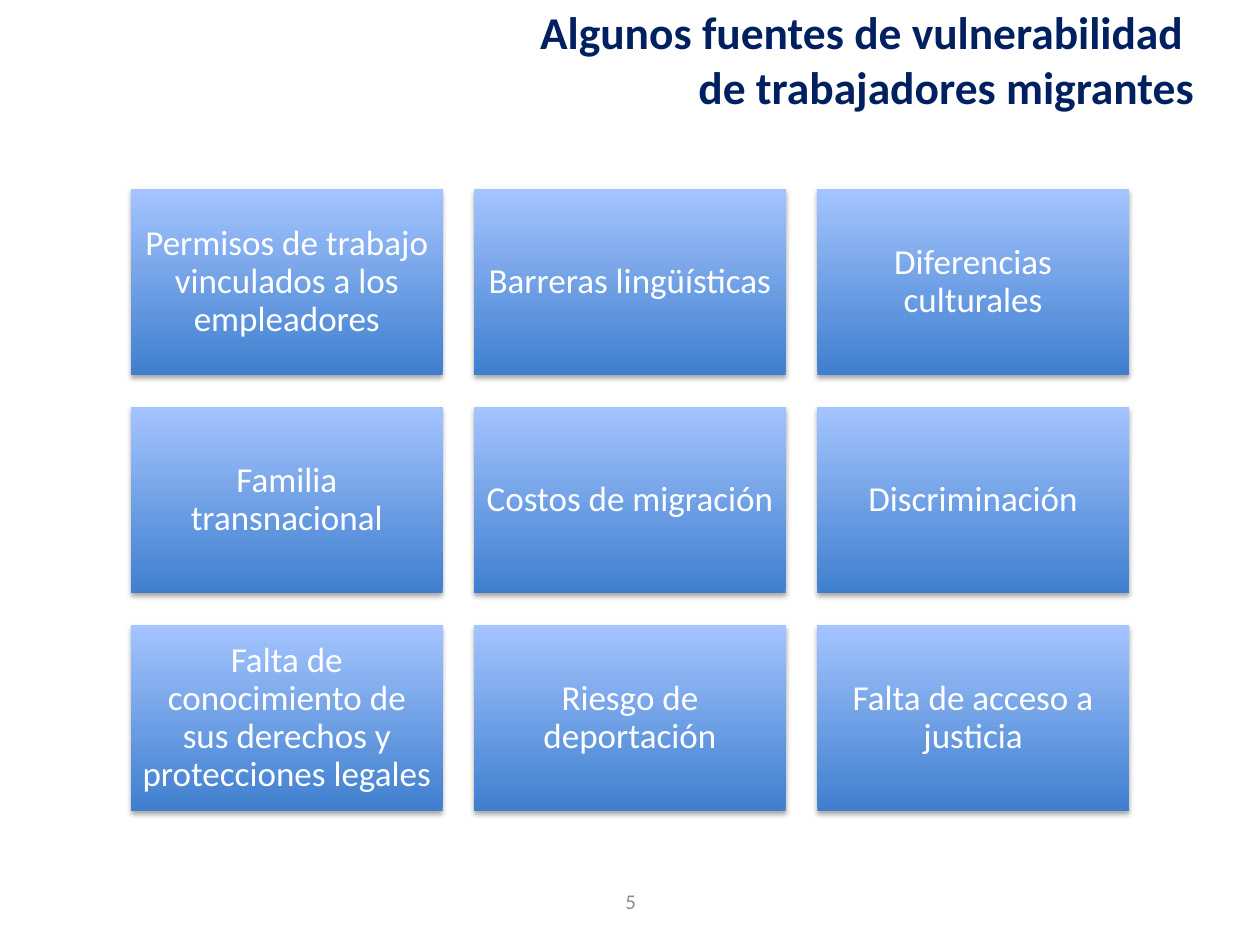
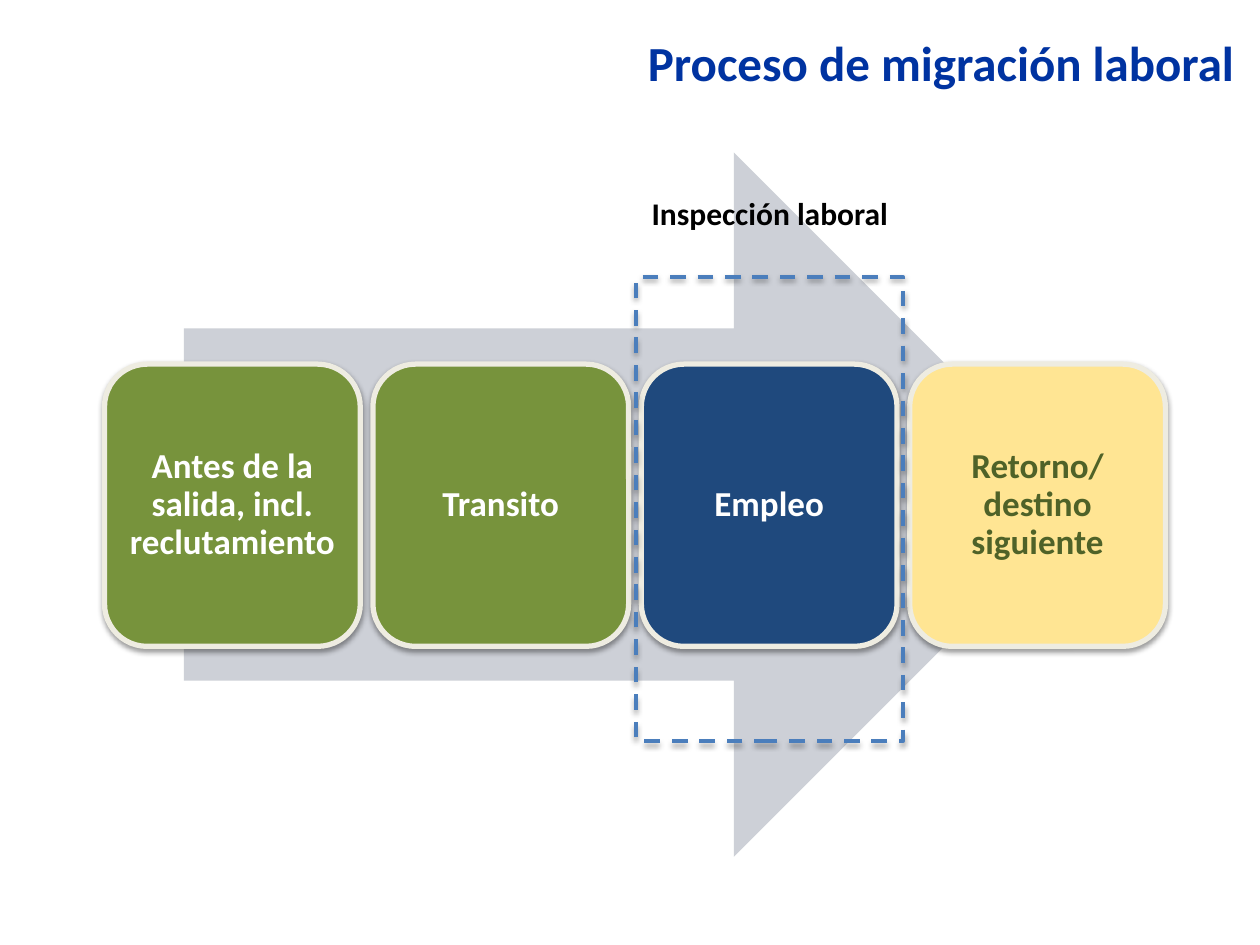
from lxml import etree
from pptx import Presentation
from pptx.dml.color import RGBColor
from pptx.enum.dml import MSO_LINE
from pptx.enum.shapes import MSO_SHAPE
from pptx.enum.text import MSO_ANCHOR, PP_ALIGN
from pptx.oxml.ns import qn
from pptx.util import Inches, Pt

RECTANGLE = MSO_SHAPE.RECTANGLE
ROUNDED = MSO_SHAPE.ROUNDED_RECTANGLE
RIGHT_ARROW = MSO_SHAPE.RIGHT_ARROW
CENTER, RIGHT = PP_ALIGN.CENTER, PP_ALIGN.RIGHT
MIDDLE, TOP = MSO_ANCHOR.MIDDLE, MSO_ANCHOR.TOP
DASH = MSO_LINE.DASH

FONT = "Calibri"
COLORS = {
    "navy": "002060",
    "royal": "0033A1",
    "card_bottom": "3F7FCE",
    "card_top": "A4C4FF",
    "white": "FFFFFF",
    "black": "000000",
    "gray": "8C8C8C",
    "arrow": "CDD0D7",
    "cream": "EEECE1",
    "green": "77933C",
    "blue": "1F497D",
    "yellow": "FFE593",
    "olive": "4F6228",
    "frame": "4B7EBC",
}

SOURCES = [
    ["Permisos de trabajo vinculados a los empleadores",
     "Barreras lingüísticas", "Diferencias culturales"],
    ["Familia transnacional", "Costos de migración", "Discriminación"],
    ["Falta de conocimiento de sus derechos y protecciones legales",
     "Riesgo de deportación", "Falta de acceso a justicia"],
]
STAGES = [
    ("Antes de la salida, incl. reclutamiento", "green", "white"),
    ("Transito", "green", "white"),
    ("Empleo", "blue", "white"),
    ("Retorno/ destino siguiente", "yellow", "olive"),
]


def color(name):
    return RGBColor.from_string(COLORS[name])


def write(shape, text, size, ink, bold=False, align=CENTER, anchor=MIDDLE,
          spacing=1.0, inset=None):
    frame = shape.text_frame
    settings = {"word_wrap": True, "vertical_anchor": anchor}
    if inset is not None:
        for side in ("left", "right", "top", "bottom"):
            settings[f"margin_{side}"] = Inches(inset)
    for name, value in settings.items():
        setattr(frame, name, value)
    para = frame.paragraphs[0]
    para.text = text
    para.alignment = align
    para.line_spacing = spacing
    for span in para.runs:
        for name, value in {"name": FONT, "size": Pt(size), "bold": bold}.items():
            setattr(span.font, name, value)
        span.font.color.rgb = color(ink)


def add_text(page, box, text, size, ink, **style):
    label = page.shapes.add_textbox(*map(Inches, box))
    write(label, text, size, ink, **style)


def add_figure(page, kind, box, fill=None, line=None, width=0):
    figure = page.shapes.add_shape(kind, *map(Inches, box))
    figure.shadow.inherit = False
    if fill:
        figure.fill.solid()
        figure.fill.fore_color.rgb = color(fill)
    else:
        figure.fill.background()
    if line:
        figure.line.color.rgb = color(line)
        figure.line.width = Pt(width)
    else:
        figure.line.fill.background()
    return figure


def add_shadow(figure, distance=1.8, opacity=35):
    effects = figure._element.spPr.find(qn("a:effectLst"))
    shadow = etree.SubElement(effects, qn("a:outerShdw"), {
        "blurRad": str(Pt(3.1)), "dist": str(Pt(distance)),
        "dir": "5400000", "rotWithShape": "0"})
    tint = etree.SubElement(shadow, qn("a:srgbClr"), val=COLORS["black"])
    etree.SubElement(tint, qn("a:alpha"), val=str(opacity * 1000))


def add_title(page, box, text, size, ink):
    add_text(page, box, text, size, ink, bold=True, align=RIGHT)


def add_card_grid(page, box, rows, gap=0.25):
    left, top, width, height = box
    card_width = (width - gap * (len(rows[0]) - 1)) / len(rows[0])
    card_height = (height - gap * (len(rows) - 1)) / len(rows)
    for row, texts in enumerate(rows):
        for column, text in enumerate(texts):
            card = add_figure(page, RECTANGLE, (
                left + column * (card_width + gap),
                top + row * (card_height + gap), card_width, card_height))
            card.fill.gradient()
            card.fill.gradient_angle = 90
            for stop, name in zip(card.fill.gradient_stops,
                                  ("card_bottom", "card_top")):
                stop.color.rgb = color(name)
            add_shadow(card)
            write(card, text, 20, "white", spacing=0.9, inset=0.08)


def add_stages(page, box, stages, gap=0.1):
    left, top, width, height = box
    stage_width = (width - gap * (len(stages) - 1)) / len(stages)
    for index, (text, fill, ink) in enumerate(stages):
        stage = add_figure(page, ROUNDED, (
            left + index * (stage_width + gap), top, stage_width, height),
            fill, "cream", 3)
        add_shadow(stage, distance=1.6, opacity=38)
        write(stage, text, 20, ink, bold=True, spacing=0.9, inset=0.08)


def add_inspection_frame(page, box):
    left, top, width, height = box
    frame = add_figure(page, RECTANGLE, box, line="frame", width=2.25)
    frame.line.dash_style = DASH
    add_shadow(frame)
    add_text(page, (left, top - 0.71, width, 0.4), "Inspección laboral",
             18, "black", bold=True, anchor=TOP)


def build_sources(page):
    add_title(page, (2.21, -0.16, 7.37, 1.25),
              "Algunos fuentes de vulnerabilidad \vde trabajadores migrantes",
              26, "navy")
    add_card_grid(page, (1.04, 1.5, 7.92, 4.94), SOURCES)
    add_text(page, (3.42, 6.95, 3.17, 0.4), "5", 12, "gray")


def build_process(page):
    add_title(page, (2.3, -0.13, 7.59, 1.25), "Proceso de migración laboral",
              28, "royal")
    add_figure(page, RIGHT_ARROW, (1.46, 1.21, 7.16, 5.59), "arrow")
    add_stages(page, (0.83, 2.89, 8.42, 2.24), STAGES)
    add_inspection_frame(page, (5.05, 2.2, 2.12, 3.68))


def main():
    deck = Presentation()
    deck.slide_width, deck.slide_height = Inches(10), Inches(7.5)
    for build in (build_sources, build_process):
        build(deck.slides.add_slide(deck.slide_layouts[6]))
    deck.save("out.pptx")


if __name__ == "__main__":
    main()
